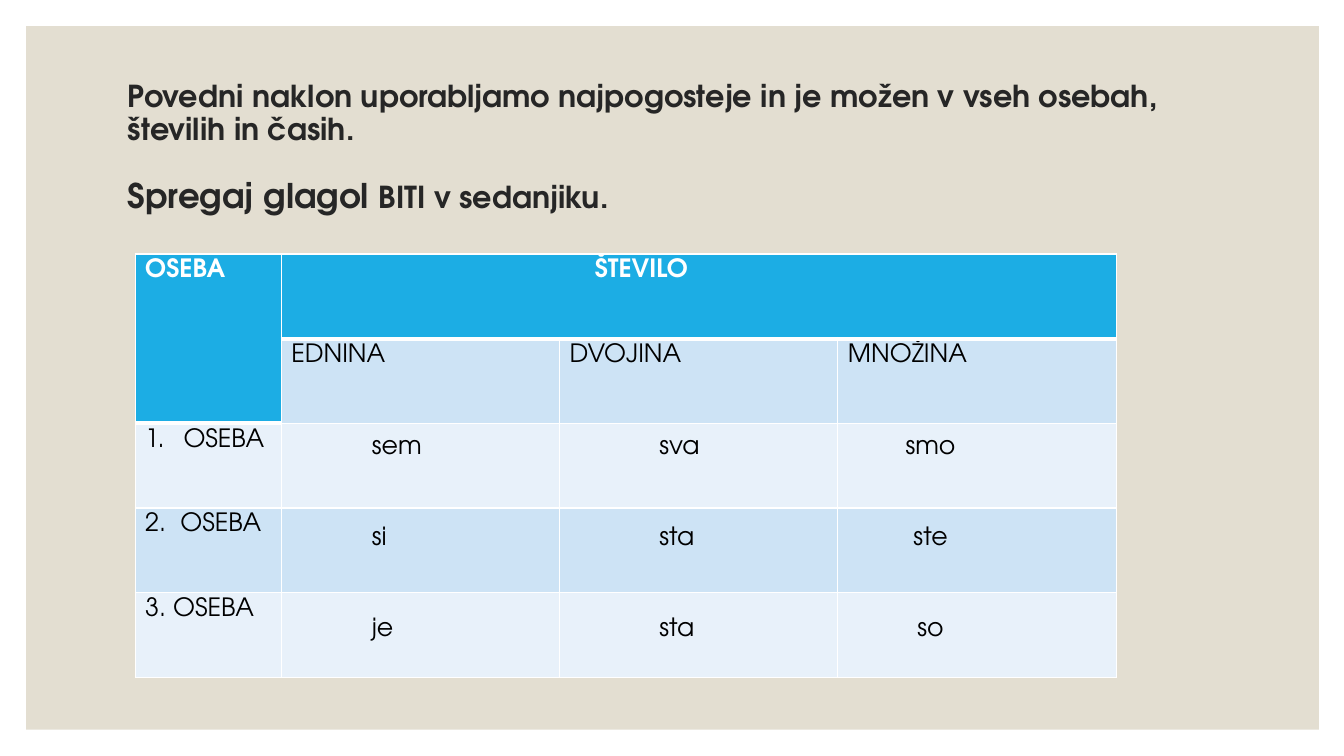
from dataclasses import dataclass

from lxml.etree import SubElement
from pptx import Presentation
from pptx.dml.color import RGBColor as Color
from pptx.enum.shapes import MSO_SHAPE as Shape
from pptx.enum.text import MSO_ANCHOR as Anchor
from pptx.oxml.ns import qn
from pptx.util import Pt

PX = 9144  # EMU per px, 100 px to the inch


@dataclass(frozen=True)
class Theme:
    font: str = "TeX Gyre Adventor"
    panel: str = "E3DED1"
    title: str = "262626"
    ink: str = "000000"
    white: str = "FFFFFF"
    header: str = "1CADE4"
    bands: tuple = ("E8F1FA", "CDE3F5")
    body_size: float = 18
    title_size: float = 21.6
    task_size: float = 24.3
    thin: float = 1
    thick: float = 3


class SlideBuilder:
    def __init__(self, slide, theme):
        self.slide = slide
        self.theme = theme

    def style(self, span, size, color, bold=False):
        font = span.font
        font.name = self.theme.font
        font.size = Pt(size)
        font.bold = bold
        font.color.rgb = Color.from_string(color)

    def panel(self, *bounds):
        box = self.slide.shapes.add_shape(Shape.RECTANGLE, *(n * PX for n in bounds))
        box.shadow.inherit = False
        box.fill.solid()
        box.fill.fore_color.rgb = Color.from_string(self.theme.panel)
        box.line.fill.background()

    def text(self, bounds, paragraphs, color, bold=False, anchor=Anchor.TOP,
             gap=0, spacing=None, tabs=()):
        """Each paragraph is a list of (text, size) spans."""
        box = self.slide.shapes.add_textbox(*(n * PX for n in bounds))
        frame = box.text_frame
        frame.word_wrap = True
        frame.vertical_anchor = anchor
        for index, spans in enumerate(paragraphs):
            para = frame.add_paragraph() if index else frame.paragraphs[0]
            para.line_spacing = spacing
            para.space_before = Pt(gap if index else 0)
            for words, size in spans:
                span = para.add_run()
                span.text = words
                self.style(span, size, color, bold)
            if tabs:
                stops = SubElement(para._p.get_or_add_pPr(), qn("a:tabLst"))
                for position, align in tabs:
                    SubElement(stops, qn("a:tab"), pos=str(position * PX), algn=align)

    def hanging(self, para, indent, numbered=False):
        props = para._p.get_or_add_pPr()
        props.set("marL", str(indent * PX))
        props.set("indent", str(-indent * PX))
        if numbered:
            SubElement(props, qn("a:buFont"), typeface="+mj-lt")
            SubElement(props, qn("a:buAutoNum"), type="arabicPeriod")

    def borders(self, cell, top, bottom):
        props = cell._tc.get_or_add_tcPr()
        widths = {"L": self.theme.thin, "R": self.theme.thin, "T": top, "B": bottom}
        for side, width in widths.items():
            line = SubElement(props, qn(f"a:ln{side}"), w=str(Pt(width)))
            fill = SubElement(line, qn("a:solidFill"))
            SubElement(fill, qn("a:srgbClr"), val=self.theme.white)

    def table(self, left, top, widths, row_height, rows):
        theme = self.theme
        table = self.slide.shapes.add_table(
            len(rows), len(widths), left * PX, top * PX,
            sum(widths) * PX, row_height * len(rows) * PX).table
        for column, width in zip(table.columns, widths):
            column.width = width * PX

        def is_header(r, c):
            return r == 0 or (r, c) == (1, 0)

        for r, values in enumerate(rows):
            table.rows[r].height = row_height * PX
            for c, value in enumerate(values):
                cell = table.cell(r, c)
                header = is_header(r, c)
                below_header = r > 0 and not header and is_header(r - 1, c)
                self.borders(cell, theme.thick if below_header else theme.thin,
                             theme.thick if header else theme.thin)
                cell.fill.solid()
                cell.fill.fore_color.rgb = Color.from_string(
                    theme.header if header else theme.bands[r % 2])
                cell.text_frame.text = value
                for span in cell.text_frame.paragraphs[0].runs:
                    self.style(span, theme.body_size,
                               theme.white if header else theme.ink, header)
        return table


def main():
    theme = Theme()
    deck = Presentation()
    deck.slide_width, deck.slide_height = 1333 * PX, 750 * PX
    page = SlideBuilder(deck.slides.add_slide(deck.slide_layouts[6]), theme)

    # Background panel
    page.panel(26, 26, 1282, 698)

    # Heading and task
    page.text((117, 87, 1100, 121), [
        [("Povedni naklon uporabljamo najpogosteje in je možen v vseh osebah, "
          "številih in časih.", theme.title_size)],
        [("Spregaj glagol ", theme.task_size), ("BITI v sedanjiku.", theme.title_size)],
    ], theme.title, bold=True, anchor=Anchor.MIDDLE, gap=23.4, spacing=0.9)

    # Conjugation table
    table = page.table(134, 252, [145, 276, 276, 276], 84, [
        ["OSEBA", "ŠTEVILO", "", ""],
        ["", "EDNINA", "DVOJINA", "MNOŽINA"],
        ["OSEBA", "", "", ""],
        ["2.\tOSEBA", "", "", ""],
        ["3. OSEBA", "", "", ""],
    ])
    table.cell(0, 0).merge(table.cell(1, 0))
    table.cell(0, 1).merge(table.cell(0, 3))
    table.cell(0, 1).margin_left = 311 * PX
    page.hanging(table.cell(2, 0).text_frame.paragraphs[0], 38, numbered=True)
    page.hanging(table.cell(3, 0).text_frame.paragraphs[0], 35)

    # Verb forms laid over the table
    forms = [("sem", "sva", "smo"), ("si", "sta", "ste"), ("je", "sta", "so")]
    page.text((359, 421, 725, 222),
              [[("\t".join(row), theme.body_size)] for row in forms],
              theme.ink, gap=43.3, tabs=[(285, "l"), (554, "ctr")])

    deck.save("out.pptx")


if __name__ == "__main__":
    main()
